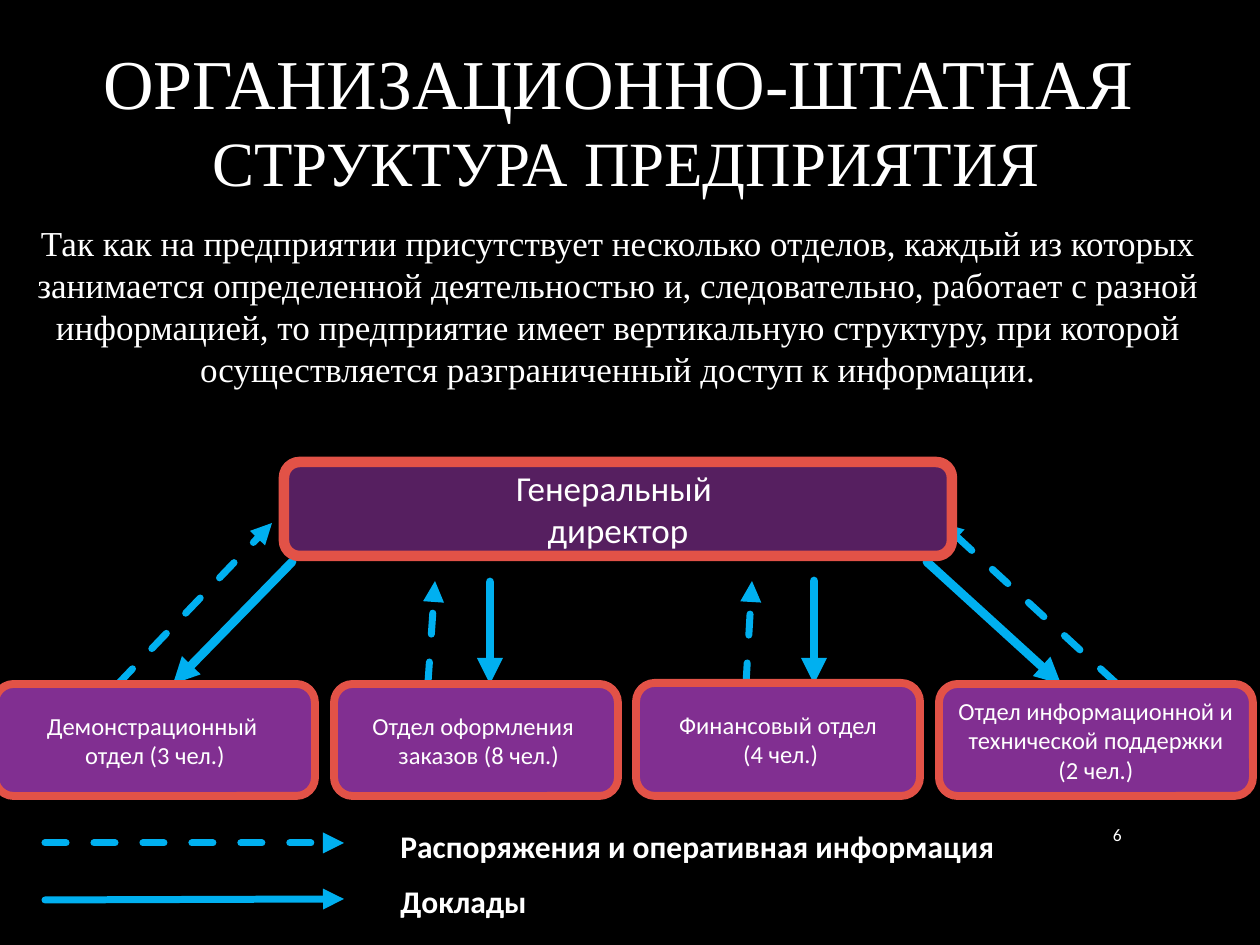
import pptx
import pptx.dml.color
import pptx.enum.dml
import pptx.enum.shapes
import pptx.enum.text
import pptx.oxml
import pptx.oxml.ns
import pptx.util

PX = 914400 / 126
ALIGN = pptx.enum.text.PP_ALIGN
ANCHOR = pptx.enum.text.MSO_ANCHOR
FIT = pptx.enum.text.MSO_AUTO_SIZE


def px(length):
    return pptx.util.Emu(round(length * PX))


def color(value):
    return pptx.dml.color.RGBColor.from_string(value)


def assign(target, values):
    for name, value in values.items():
        setattr(target, name, value)


class OrgPage:
    """Holds the style and the current slide, with one method per kind of element."""

    black, white = "000000", "FFFFFF"
    arrow_color, border = "00B0F0", "E25247"
    sans, serif = "Calibri", "Times New Roman"

    def __init__(self, page):
        self.page = page
        page.background.fill.solid()
        page.background.fill.fore_color.rgb = color(self.black)

    def style(self, font, size, name, bold=False):
        assign(font, {"size": pptx.util.Pt(size), "name": name, "bold": bold})
        font.color.rgb = color(self.white)

    def fill_lines(self, frame, lines, size, name, align, bold=False):
        for index, line in enumerate(lines):
            para = frame.add_paragraph() if index else frame.paragraphs[0]
            para.alignment = align
            span = para.add_run()
            span.text = line
            self.style(span.font, size, name, bold)

    def title(self, area, lines, indent):
        box = self.page.shapes.title
        assign(box, dict(zip(("left", "top", "width", "height"), map(px, area))))
        assign(box.text_frame, {"vertical_anchor": ANCHOR.MIDDLE, "auto_size": FIT.NONE, "word_wrap": True})
        para = box.text_frame.paragraphs[0]
        para.alignment = ALIGN.CENTER
        properties = para._p.get_or_add_pPr()
        properties.set("marL", str(px(indent)))
        properties.set("indent", "0")
        for index, (line, size) in enumerate(lines):
            if index:
                para.add_line_break()
            span = para.add_run()
            span.text = line
            self.style(span.font, size, self.serif)

    def text(self, area, line, size, name, align=ALIGN.LEFT, bold=False, anchor=ANCHOR.TOP):
        frame = self.page.shapes.add_textbox(*map(px, area)).text_frame
        assign(frame, {"word_wrap": True, "vertical_anchor": anchor})
        self.fill_lines(frame, [line], size, name, align, bold)

    def box(self, area, lines, fill, size, weight):
        box = self.page.shapes.add_shape(
            pptx.enum.shapes.MSO_SHAPE.ROUNDED_RECTANGLE, *map(px, area))
        box.shadow.inherit = False
        box.fill.solid()
        box.fill.fore_color.rgb = color(fill)
        box.line.color.rgb = color(self.border)
        box.line.width = pptx.util.Pt(weight)
        assign(box.text_frame, {"word_wrap": True, "vertical_anchor": ANCHOR.MIDDLE})
        self.fill_lines(box.text_frame, lines, size, self.sans, ALIGN.CENTER)

    def arrow(self, ends, weight, dashed=False):
        arrow = self.page.shapes.add_connector(
            pptx.enum.shapes.MSO_CONNECTOR.STRAIGHT, *map(px, ends))
        arrow.line.color.rgb = color(self.arrow_color)
        arrow.line.width = pptx.util.Pt(weight)
        if dashed:
            arrow.line.dash_style = pptx.enum.dml.MSO_LINE.DASH
        stroke = arrow.line._get_or_add_ln()
        stroke.set("cap", "rnd")
        space = pptx.oxml.ns.nsdecls("a")
        stroke.append(pptx.oxml.parse_xml(f"<a:round {space}/>"))
        stroke.append(pptx.oxml.parse_xml(f'<a:tailEnd {space} type="triangle"/>'))
        arrow._element.spPr.append(pptx.oxml.parse_xml(f"<a:effectLst {space}/>"))


INTRO = (
    "Так как на предприятии присутствует несколько отделов, каждый из которых "
    "занимается определенной деятельностью и, следовательно, работает с разной "
    "информацией, то предприятие имеет вертикальную структуру, при которой "
    "осуществляется разграниченный доступ к информации."
)
ORDERS = [(292, 562, 173, 684), (490, 582, 490, 684), (814, 581, 814, 684), (927, 562, 1061, 684)]
REPORTS = [(118, 684, 272, 523), (428, 683, 435, 581), (746, 684, 752, 581), (1116, 683, 942, 523)]
DEPARTMENTS = [
    ((-5, 684, 320, 112), ["Демонстрационный ", "отдел (3 чел.)"]),
    ((334, 684, 284, 112), ["Отдел оформления ", " заказов (8 чел.)"]),
    ((636, 683, 284, 113), ["Финансовый отдел", " (4 чел.)"]),
    ((939, 684, 314, 112), ["Отдел информационной и ", "технической поддержки (2 чел.)"]),
]
LEGEND = [
    ((45, 843, 344, 843), True, 821, "Распоряжения и оперативная информация"),
    ((45, 900, 344, 899), False, 876, "Доклады"),
]


def main():
    deck = pptx.Presentation()
    deck.slide_width, deck.slide_height = px(1260), px(945)
    org = OrgPage(deck.slides.add_slide(deck.slide_layouts[5]))
    org.title((-26, 23, 1280, 193),
              [("ОРГАНИЗАЦИОННО-ШТАТНАЯ", 40), (" СТРУКТУРА ПРЕДПРИЯТИЯ", 36)], 9)
    org.text((0, 215, 1236, 183), INTRO, 20, org.serif, ALIGN.CENTER)
    for order, report in zip(ORDERS, REPORTS):
        org.arrow(order, 5)
        org.arrow(report, 4, dashed=True)
    for area, lines in DEPARTMENTS:
        org.box(area, lines, "812F91", 14, 4.5)
    org.box((284, 462, 668, 94), ["Генеральный ", "директор"], "561F60", 20, 6)
    for ends, dashed, top, label in LEGEND:
        org.arrow(ends, 4, dashed)
        org.text((388, top, 640, 35), label, 18, org.sans, bold=True)
    org.text((1076, 809, 58, 52), "6", 10, org.sans, ALIGN.RIGHT, anchor=ANCHOR.MIDDLE)
    deck.save("out.pptx")


if __name__ == "__main__":
    main()
